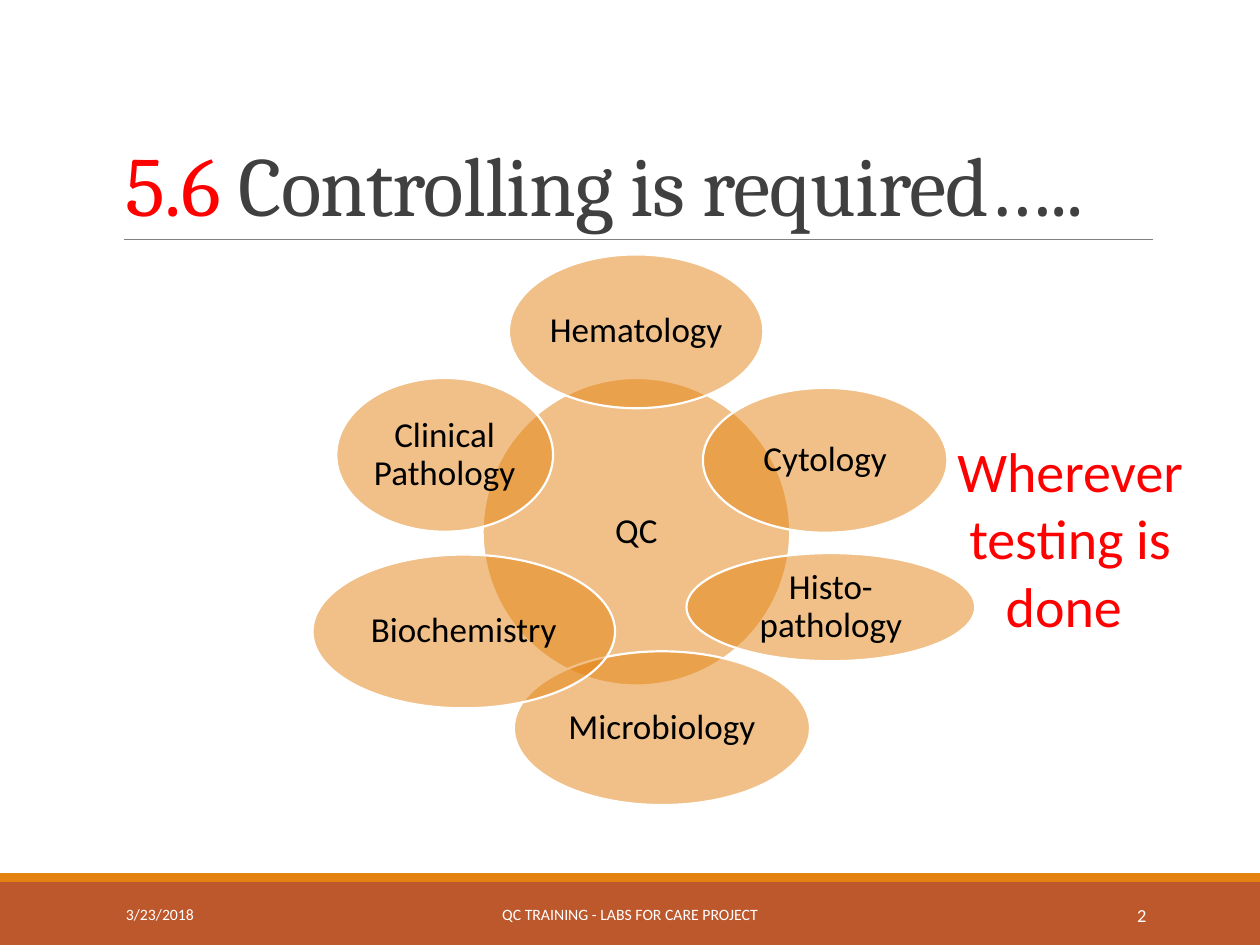
import lxml.etree
import pptx
import pptx.dml.color
import pptx.enum.shapes
import pptx.enum.text
import pptx.oxml
import pptx.oxml.ns
import pptx.util

Cm = pptx.util.Cm
Pt = pptx.util.Pt
ALIGN = pptx.enum.text.PP_ALIGN
ANCHOR = pptx.enum.text.MSO_ANCHOR
SHAPE = pptx.enum.shapes.MSO_SHAPE

COLOURS = {
    "orange": "E48312",
    "rust": "BD582C",
    "rule": "808080",
    "red": "FF0000",
    "title": "404040",
    "black": "000000",
    "white": "FFFFFF",
}

# Label, then left, top, width and height in centimetres
CIRCLES = [
    ("QC", 9.73, 7.62, 6.2, 6.2),
    ("Hematology", 10.26, 5.13, 5.13, 3.1),
    ("Cytology", 14.17, 7.82, 4.93, 2.92),
    ("Histo-pathology", 13.84, 11.15, 5.82, 2.18),
    ("Microbiology", 10.36, 13.13, 5.97, 3.1),
    ("Biochemistry", 6.3, 11.18, 6.1, 3.1),
    ("Clinical Pathology", 6.78, 7.62, 4.37, 3.1),
]

FOOTERS = [
    ("3/23/2018", 2.29, 5.16, 9, ALIGN.LEFT),
    ("QC TRAINING - LABS FOR CARE PROJECT", 7.67, 10.06, 9, ALIGN.CENTER),
    ("2", 20.62, 2.74, 10.5, ALIGN.RIGHT),
]


def colour(name):
    return pptx.dml.color.RGBColor.from_string(COLOURS[name])


def set_attributes(target, values):
    for name, value in values.items():
        setattr(target, name, value)


def format_frame(shape, margin=None, anchor=ANCHOR.MIDDLE):
    frame = shape.text_frame
    set_attributes(frame, {"word_wrap": True, "vertical_anchor": anchor})
    if margin is not None:
        sides = ("left", "right", "top", "bottom")
        set_attributes(frame, {f"margin_{side}": margin for side in sides})
    return frame


def add_run(paragraph, text, size, colour_name, font="Calibri"):
    run = paragraph.add_run()
    run.text = text
    set_attributes(run.font, {"name": font, "size": Pt(size)})
    run.font.color.rgb = colour(colour_name)
    return run


def add_plain_shape(shapes, kind, box, fill=None):
    """Add a preset shape without line or shadow."""
    shape = shapes.add_shape(kind, *map(Cm, box))
    shape.shadow.inherit = False
    shape.line.fill.background()
    if fill:
        shape.fill.solid()
        shape.fill.fore_color.rgb = colour(fill)
    else:
        shape.fill.background()
    return shape


def add_rule(slide, left, right, top):
    line = slide.shapes.add_connector(
        pptx.enum.shapes.MSO_CONNECTOR.STRAIGHT, Cm(left), Cm(top), Cm(right), Cm(top))
    line.line.color.rgb = colour("rule")
    line.line.width = Pt(0.5)
    properties = line._element.spPr
    lxml.etree.SubElement(properties, pptx.oxml.ns.qn("a:effectLst"))


def add_title(slide):
    box = slide.shapes.add_textbox(Cm(2.29), Cm(0.79), Cm(22.05), Cm(4.04))
    paragraph = format_frame(box, anchor=ANCHOR.BOTTOM).paragraphs[0]
    paragraph.line_spacing = 0.85
    for text, name in (("5.6", "red"), (" Controlling is required…..", "title")):
        run = add_run(paragraph, text, 48, name, "Cambria")
        run.font._element.set("spc", "-50")


def add_circle(shapes, label, *box):
    """Add a half-transparent ellipse with its label."""
    circle = add_plain_shape(shapes, SHAPE.OVAL, box, "orange")
    fill_colour = circle._element.spPr.find(".//" + pptx.oxml.ns.qn("a:srgbClr"))
    lxml.etree.SubElement(fill_colour, pptx.oxml.ns.qn("a:alpha"), val="50000")
    circle.line.color.rgb = colour("white")
    circle.line.width = Pt(1.25)
    paragraph = format_frame(circle, Cm(0.07)).paragraphs[0]
    set_attributes(paragraph, {"alignment": ALIGN.CENTER, "line_spacing": 0.9})
    add_run(paragraph, label, 20, "black")


def add_callout(slide):
    """Add the red text with its soft shadow."""
    callout = add_plain_shape(slide.shapes, SHAPE.OVAL, (17.98, 6.07, 7.19, 9.53))
    paragraph = format_frame(callout).paragraphs[0]
    paragraph.alignment = ALIGN.CENTER
    run = add_run(paragraph, "Wherever testing is done ", 32, "red")
    shadow = pptx.oxml.parse_xml(
        f'<a:effectLst {pptx.oxml.ns.nsdecls("a")}>'
        '<a:outerShdw blurRad="38100" dist="38100" dir="2700000" algn="tl">'
        f'<a:srgbClr val="{COLOURS["black"]}"><a:alpha val="43000"/></a:srgbClr>'
        '</a:outerShdw></a:effectLst>')
    run.font._element.find(pptx.oxml.ns.qn("a:solidFill")).addnext(shadow)


def add_footer(slide, text, left, width, size, alignment):
    box = slide.shapes.add_textbox(Cm(left), Cm(17.93), Cm(width), Cm(1.02))
    paragraph = format_frame(box).paragraphs[0]
    paragraph.alignment = alignment
    add_run(paragraph, text, size, "white")


def main():
    presentation = pptx.Presentation()
    set_attributes(presentation, {"slide_width": Cm(25.4), "slide_height": Cm(19.05)})
    slide = presentation.slides.add_slide(presentation.slide_layouts[6])

    add_plain_shape(slide.shapes, SHAPE.RECTANGLE, (0, 17.78, 25.4, 1.27), "rust")
    add_plain_shape(slide.shapes, SHAPE.RECTANGLE, (0, 17.6, 25.4, 0.18), "orange")
    add_rule(slide, 2.49, 23.24, 4.83)
    add_title(slide)
    diagram = slide.shapes.add_group_shape()
    for circle in CIRCLES:
        add_circle(diagram.shapes, *circle)
    for footer in FOOTERS:
        add_footer(slide, *footer)
    add_callout(slide)
    presentation.save("out.pptx")


if __name__ == "__main__":
    main()
